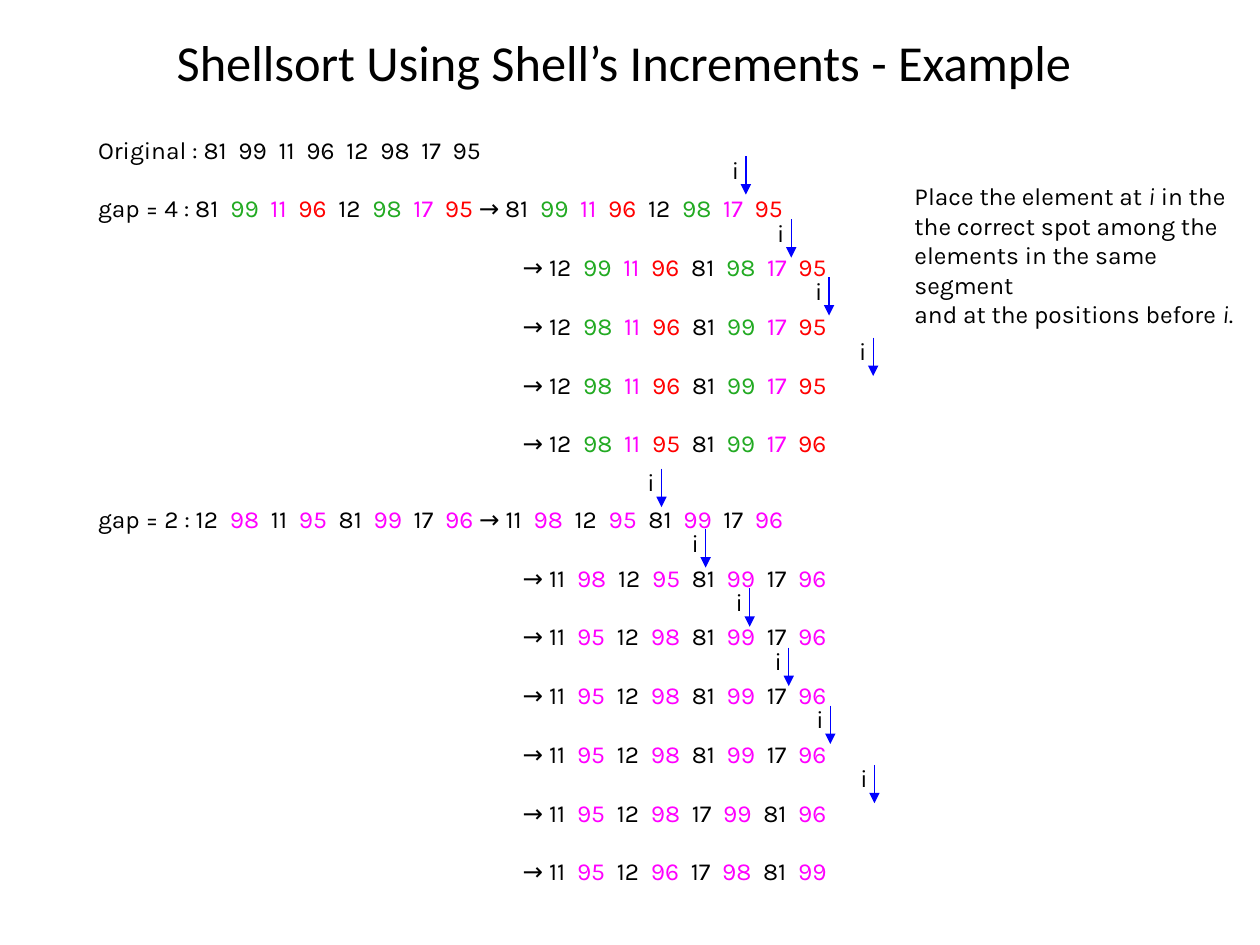
from lxml.etree import SubElement
from pptx import Presentation
from pptx.dml.color import RGBColor
from pptx.enum.shapes import MSO_CONNECTOR
from pptx.enum.text import MSO_ANCHOR, PP_ALIGN
from pptx.oxml.ns import qn
from pptx.util import Inches, Pt

BLACK = RGBColor(0x00, 0x00, 0x00)
GREEN = RGBColor(0x22, 0xAA, 0x22)
MAGENTA = RGBColor(0xFF, 0x00, 0xFF)
RED = RGBColor(0xFF, 0x00, 0x00)
BLUE = RGBColor(0x00, 0x00, 0xFF)

TITLE_FONT, BODY_FONT = "Calibri", "Karla"
TITLE_SIZE, BODY_SIZE = 28.8, 14
ROW_GAP = Pt(16.75)
TEXT_LEFT = 6.8
STEP_INDENT = 33.7

# One colour per interleaved segment, and the list after each step
ORIGINAL = "81 99 11 96 12 98 17 95"
GAP_FOUR_COLORS = [BLACK, GREEN, MAGENTA, RED]
GAP_FOUR_STEPS = [
    "81 99 11 96 12 98 17 95",
    "12 99 11 96 81 98 17 95",
    "12 98 11 96 81 99 17 95",
    "12 98 11 96 81 99 17 95",
    "12 98 11 95 81 99 17 96",
]
GAP_TWO_COLORS = [BLACK, MAGENTA]
GAP_TWO_STEPS = [
    "11 98 12 95 81 99 17 96",
    "11 98 12 95 81 99 17 96",
    "11 95 12 98 81 99 17 96",
    "11 95 12 98 81 99 17 96",
    "11 95 12 98 81 99 17 96",
    "11 95 12 98 17 99 81 96",
    "11 95 12 96 17 98 81 99",
]

# Column and row where each index arrow starts
MARKERS = [
    (59.2, 12.4), (62.8, 17.4), (65.8, 22), (69.3, 26.8),
    (52.5, 37.2), (56, 42), (59.5, 46.7), (62.6, 51.4), (65.9, 56), (69.4, 60.7),
]
ARROW_ROWS = 3.05

NOTE = [
    [("Place the element at ", False), ("i", True), (" in the", False)],
    [("the correct spot among the", False)],
    [("elements in the same segment", False)],
    [("and at the positions before ", False), ("i", True), (".", False)],
]


def cells(count):
    """Length of a number of cells on a grid of 100 columns by 75 rows."""
    return Inches(count / 10)


def add_box(shapes, column, row, columns, rows, wrap=True):
    box = shapes.add_textbox(cells(column), cells(row), cells(columns), cells(rows))
    box.text_frame.word_wrap = wrap
    return box.text_frame


def next_para(frame):
    first = frame.paragraphs[0]
    return frame.add_paragraph() if first.runs else first


def add_span(para, text, color=BLACK, font=BODY_FONT, size=BODY_SIZE, italic=False):
    span = para.add_run()
    span.text = text
    span.font.name = font
    span.font.size = Pt(size)
    span.font.color.rgb = color
    span.font.italic = italic


def add_numbers(para, numbers, colors):
    for index, number in enumerate(numbers.split()):
        separator = "  " if index else ""
        add_span(para, separator + number, colors[index % len(colors)])


def add_row(frame, label, numbers, colors):
    para = next_para(frame)
    para.space_after = ROW_GAP
    add_span(para, label)
    add_numbers(para, numbers, colors)
    return para


def add_pass(frame, start, steps, colors):
    """Write the starting list and first result, then the indented results."""
    para = add_row(frame, f"gap = {len(colors)} : ", start, colors)
    add_span(para, " → ")
    add_numbers(para, steps[0], colors)
    for step in steps[1:]:
        para = add_row(frame, "→ ", step, colors)
        properties = para._p.get_or_add_pPr()
        properties.set("marL", str(cells(STEP_INDENT)))
        properties.set("indent", "0")


def add_marker(slide, column, row):
    """Blue arrow with the index name beside it."""
    group = slide.shapes.add_group_shape()
    arrow = group.shapes.add_connector(
        MSO_CONNECTOR.STRAIGHT, cells(column), cells(row),
        cells(column), cells(row + ARROW_ROWS))
    arrow.line.color.rgb = BLUE
    arrow.line.width = Pt(0.75)
    SubElement(arrow.line._get_or_add_ln(), qn("a:tailEnd"), type="triangle")
    SubElement(arrow._element.spPr, qn("a:effectLst"))
    frame = add_box(group.shapes, column - 2.1, row - 0.6, 2.5, 3.3, wrap=False)
    add_span(frame.paragraphs[0], "i")


def add_title(slide, text):
    frame = add_box(slide.shapes, 3.2, 1.8, 92.7, 6.1)
    frame.vertical_anchor = MSO_ANCHOR.MIDDLE
    para = frame.paragraphs[0]
    para.alignment = PP_ALIGN.CENTER
    add_span(para, text, font=TITLE_FONT, size=TITLE_SIZE)


def add_note(slide):
    frame = add_box(slide.shapes, 71.6, 13.9, 28.4, 10.3)
    for line in NOTE:
        para = next_para(frame)
        for text, italic in line:
            add_span(para, text, italic=italic)


def main():
    deck = Presentation()
    deck.slide_width, deck.slide_height = cells(100), cells(75)
    page = deck.slides.add_slide(deck.slide_layouts[6])
    add_title(page, "Shellsort Using Shell’s Increments - Example")

    # Pass with gap 4
    frame = add_box(page.shapes, TEXT_LEFT, 10.2, 65.5, 26.6)
    add_row(frame, "Original : ", ORIGINAL, [BLACK])
    add_pass(frame, ORIGINAL, GAP_FOUR_STEPS, GAP_FOUR_COLORS)

    # Pass with gap 2
    frame = add_box(page.shapes, TEXT_LEFT, 39.5, 65.5, 31.3)
    add_pass(frame, GAP_FOUR_STEPS[-1], GAP_TWO_STEPS, GAP_TWO_COLORS)

    # Explanation and index markers
    add_note(page)
    for column, row in MARKERS:
        add_marker(page, column, row)
    deck.save("out.pptx")


if __name__ == "__main__":
    main()
